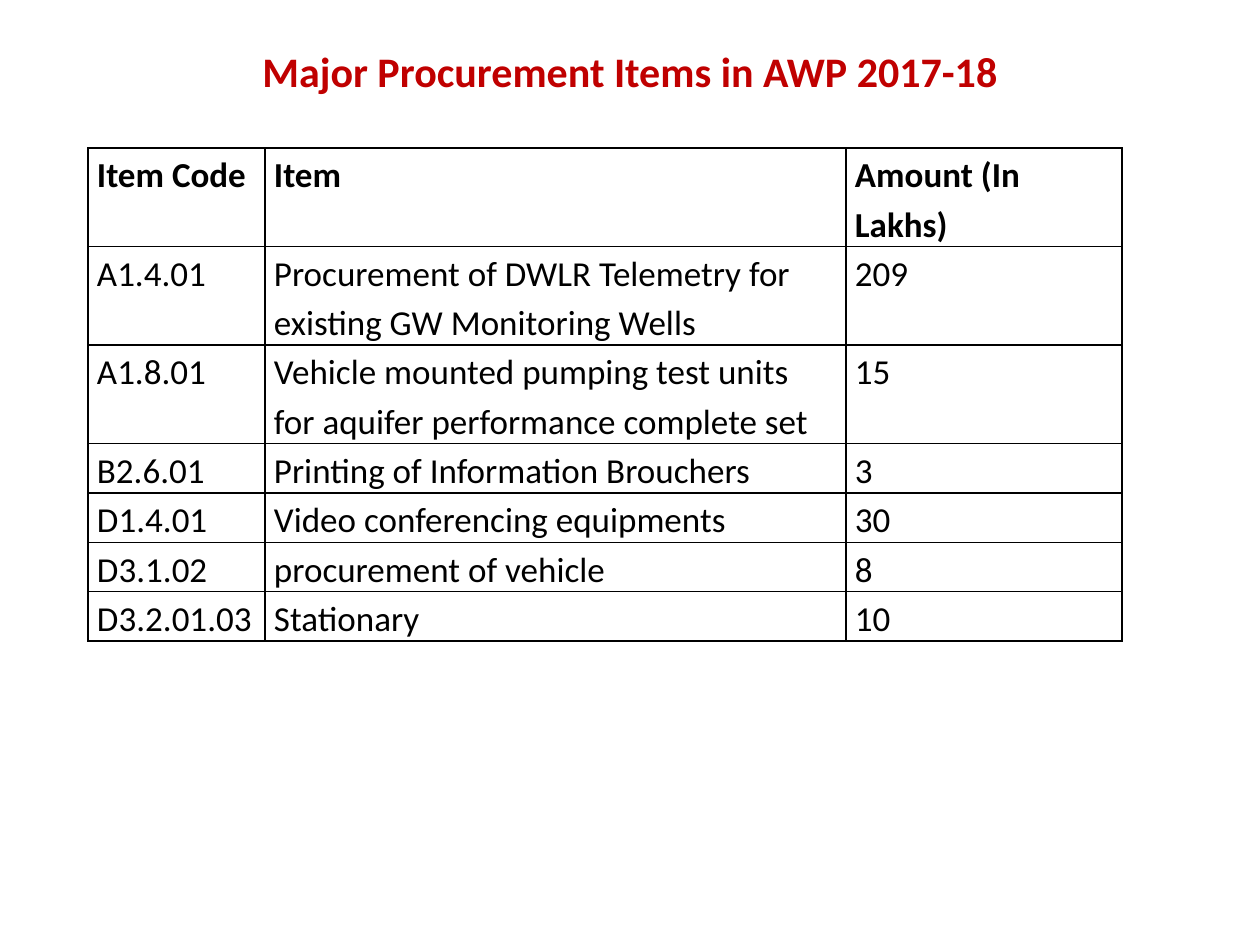
import pptx
import pptx.dml.color
import pptx.enum.text
import pptx.oxml
import pptx.oxml.ns
import pptx.util

SCALE = 914400 / 126


def px(length):
    return pptx.util.Emu(round(length * SCALE))


def colour(value):
    return pptx.dml.color.RGBColor.from_string(value)


def write(frame, text, size=20, ink="000000", bold=False, align="LEFT", spacing=1.0, font="Calibri"):
    para = frame.paragraphs[0]
    para.alignment = getattr(pptx.enum.text.PP_ALIGN, align)
    para.line_spacing = spacing
    para.space_before = pptx.util.Pt(0)
    span = para.add_run()
    span.text = text
    span.font.name = font
    span.font.size = pptx.util.Pt(size)
    span.font.bold = bold
    span.font.color.rgb = colour(ink)


class PageBuilder:
    accent = "C00000"
    border = "000000"
    border_width = pptx.util.Pt(1)
    cell_inset = 9

    def __init__(self, deck):
        self.page = deck.slides.add_slide(deck.slide_layouts[5])

    def title(self, text, left, top, width, height):
        box = self.page.shapes.title
        box.left, box.top, box.width, box.height = map(px, (left, top, width, height))
        frame = box.text_frame
        frame.word_wrap = True
        frame.auto_size = pptx.enum.text.MSO_AUTO_SIZE.NONE
        frame.vertical_anchor = pptx.enum.text.MSO_ANCHOR.TOP
        write(frame, text, size=24, ink=self.accent, bold=True, align="CENTER")

    def outline(self, cell):
        properties = cell._tc.get_or_add_tcPr()
        for position, side in enumerate(("lnL", "lnR", "lnT", "lnB")):
            properties.insert(position, pptx.oxml.parse_xml(
                f'<a:{side} {pptx.oxml.ns.nsdecls("a")} w="{self.border_width}">'
                f'<a:solidFill><a:srgbClr val="{self.border}"/></a:solidFill></a:{side}>'))

    def table(self, rows, left, top, widths, heights):
        box = self.page.shapes.add_table(
            len(rows), len(widths), px(left), px(top), px(sum(widths)), px(sum(heights)))
        grid = box.table
        grid.horz_banding = False
        for column, width in zip(grid.columns, widths):
            column.width = px(width)
        for index, (values, height) in enumerate(zip(rows, heights)):
            grid.rows[index].height = px(height)
            for cell, value in zip(grid.rows[index].cells, values):
                cell.margin_left = cell.margin_right = px(self.cell_inset)
                cell.margin_top = cell.margin_bottom = 0
                cell.fill.background()
                self.outline(cell)
                write(cell.text_frame, value, bold=index == 0, spacing=1.15)


def main():
    deck = pptx.Presentation()
    deck.slide_width, deck.slide_height = px(1260), px(945)
    builder = PageBuilder(deck)
    builder.title("Major Procurement Items in AWP 2017-18", 0, 39, 1260, 63)
    items = [
        ("Item Code", "Item", "Amount (In Lakhs)"),
        ("A1.4.01", "Procurement of DWLR Telemetry for existing GW Monitoring Wells", "209"),
        ("A1.8.01", "Vehicle mounted pumping test units for aquifer performance complete set", "15"),
        ("B2.6.01", "Printing of Information Brouchers", "3"),
        ("D1.4.01", "Video conferencing equipments", "30"),
        ("D3.1.02", "procurement of vehicle", "8"),
        ("D3.2.01.03", "Stationary", "10"),
    ]
    line = 48
    builder.table(items, 88, 148, [177, 581, 276], [2 * line] * 3 + [line] * 4)
    deck.save("out.pptx")


if __name__ == "__main__":
    main()
